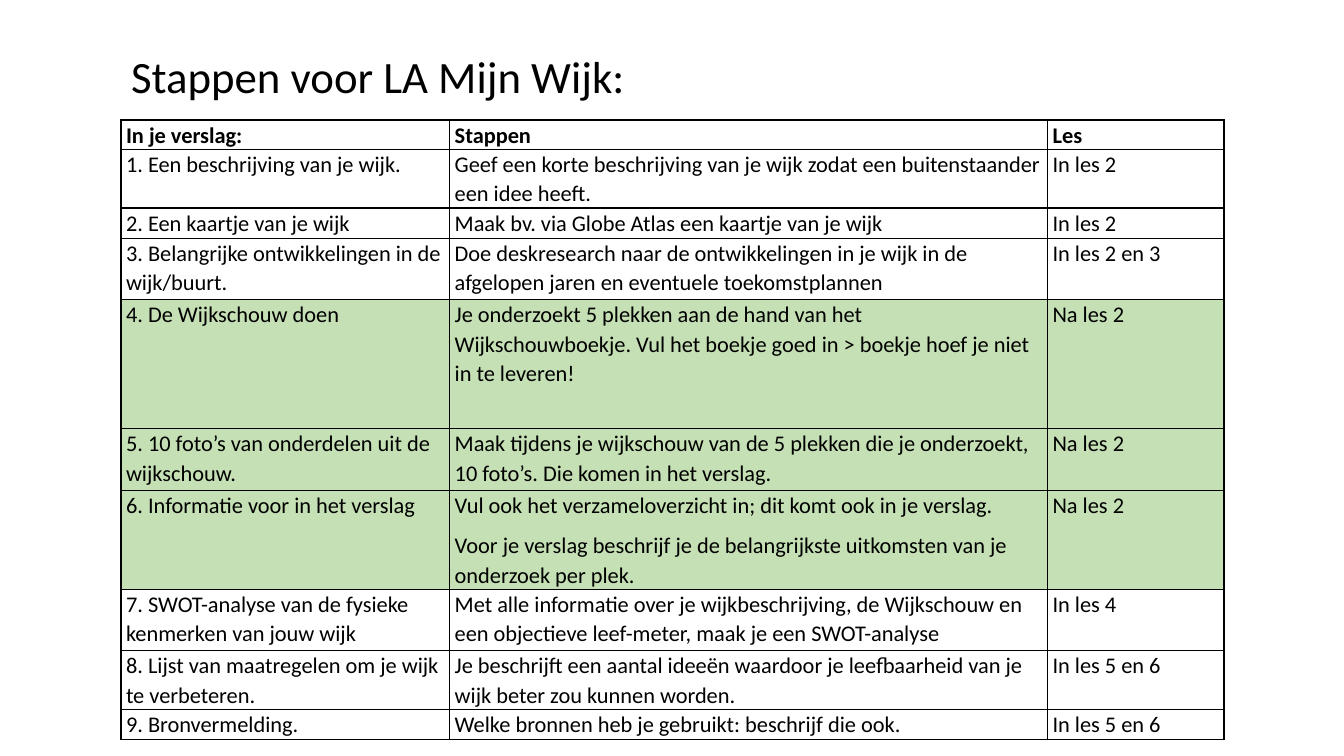
from lxml import etree
from pptx import Presentation
from pptx import util as u
from pptx.dml.color import RGBColor
from pptx.enum import text
from pptx.oxml import ns

BLACK, GREEN = "000000", "C5E0B4"


def colour(value):
    return RGBColor.from_string(value)


class Page:
    """Holds the style and the current slide."""

    font = "Calibri"

    def __init__(self, deck):
        self.page = deck.slides.add_slide(deck.slide_layouts[5])

    def add_span(self, para, words, size, bold=False):
        span = para.add_run()
        span.text = words
        span.font.name = self.font
        span.font.size = u.Pt(size)
        span.font.bold = bold
        span.font.color.rgb = colour(BLACK)

    def title(self, words, left, top, width, height):
        box = self.page.shapes.title
        box.left, box.top = u.Inches(left), u.Inches(top)
        box.width, box.height = u.Inches(width), u.Inches(height)
        frame = box.text_frame
        frame.word_wrap = True
        frame.auto_size = text.MSO_AUTO_SIZE.NONE
        frame.vertical_anchor = text.MSO_ANCHOR.TOP
        para = frame.paragraphs[0]
        para.alignment = text.PP_ALIGN.LEFT
        self.add_span(para, words, 32)

    def border(self, cell):
        props = cell._tc.get_or_add_tcPr()
        for side in ("a:lnL", "a:lnR", "a:lnT", "a:lnB"):
            line = etree.SubElement(props, ns.qn(side), w=str(u.Pt(1)))
            fill = etree.SubElement(line, ns.qn("a:solidFill"))
            etree.SubElement(fill, ns.qn("a:srgbClr"), val=BLACK)

    def cell(self, cell, paragraphs, bold, fill):
        cell.margin_left = cell.margin_right = u.Inches(0.05)
        cell.margin_top = cell.margin_bottom = 0
        frame = cell.text_frame
        for index, words in enumerate(paragraphs):
            para = frame.add_paragraph() if index else frame.paragraphs[0]
            para.line_spacing = 1.07
            para.space_after = u.Pt(8)
            self.add_span(para, words, 16, bold)
        self.border(cell)
        if fill:
            cell.fill.solid()
            cell.fill.fore_color.rgb = colour(fill)
        else:
            cell.fill.background()

    def table(self, rows, left, top, widths, heights, shaded):
        table = self.page.shapes.add_table(
            len(rows), len(widths), u.Inches(left), u.Inches(top),
            u.Inches(sum(widths)), u.Inches(sum(heights))).table
        table.horz_banding = False
        for column, width in zip(table.columns, widths):
            column.width = u.Inches(width)
        for r, (row, height) in enumerate(zip(rows, heights)):
            table.rows[r].height = u.Inches(height)
            for c, words in enumerate(row):
                self.cell(table.cell(r, c), words.split("\n"), r == 0,
                          GREEN if r in shaded else None)


STEPS = [
    ("In je verslag:", "Stappen", "Les"),
    ("1. Een beschrijving van je wijk.",
     "Geef een korte beschrijving van je wijk zodat een buitenstaander een idee heeft.",
     "In les 2"),
    ("2. Een kaartje van je wijk",
     "Maak bv. via Globe Atlas een kaartje van je wijk", "In les 2"),
    ("3. Belangrijke ontwikkelingen in de wijk/buurt.",
     "Doe deskresearch naar de ontwikkelingen in je wijk in de afgelopen jaren "
     "en eventuele toekomstplannen", "In les 2 en 3"),
    ("4. De Wijkschouw doen",
     "Je onderzoekt 5 plekken aan de hand van het Wijkschouwboekje. "
     "Vul het boekje goed in > boekje hoef je niet in te leveren!", "Na les 2"),
    ("5. 10 foto’s van onderdelen uit de wijkschouw.",
     "Maak tijdens je wijkschouw van de 5 plekken die je onderzoekt, 10 foto’s. "
     "Die komen in het verslag.", "Na les 2"),
    ("6. Informatie voor in het verslag",
     "Vul ook het verzameloverzicht in; dit komt ook in je verslag.\n"
     "Voor je verslag beschrijf je de belangrijkste uitkomsten van je onderzoek per plek.",
     "Na les 2"),
    ("7. SWOT-analyse van de fysieke kenmerken van jouw wijk",
     "Met alle informatie over je wijkbeschrijving, de Wijkschouw en een objectieve "
     "leef-meter, maak je een SWOT-analyse", "In les 4"),
    ("8. Lijst van maatregelen om je wijk te verbeteren.",
     "Je beschrijft een aantal ideeën waardoor je leefbaarheid van je wijk beter "
     "zou kunnen worden.", "In les 5 en 6"),
    ("9. Bronvermelding.",
     "Welke bronnen heb je gebruikt: beschrijf die ook.", "In les 5 en 6"),
]


def main():
    deck = Presentation()
    deck.slide_width, deck.slide_height = u.Inches(13.33), u.Inches(7.5)
    page = Page(deck)

    # Title
    page.title("Stappen voor LA Mijn Wijk:", 1.2, 0.43, 6.16, 0.64)

    # Steps, with the neighbourhood survey rows shaded
    heights = [0.29, 0.58, 0.3, 0.61, 1.28, 0.61, 0.98, 0.61, 0.58, 0.3]
    page.table(STEPS, 1.2, 1.19, [3.26, 5.93, 1.75], heights, shaded=(4, 5, 6))

    deck.save("out.pptx")


if __name__ == "__main__":
    main()
